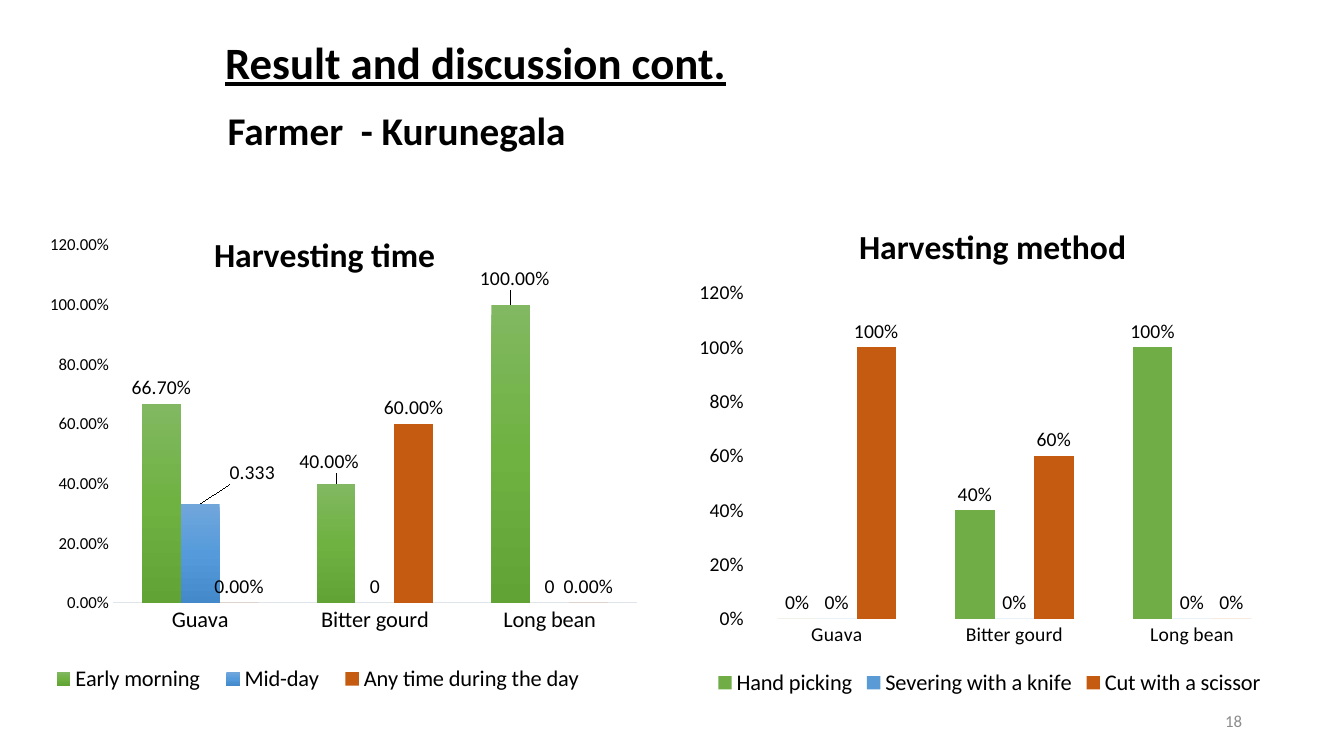
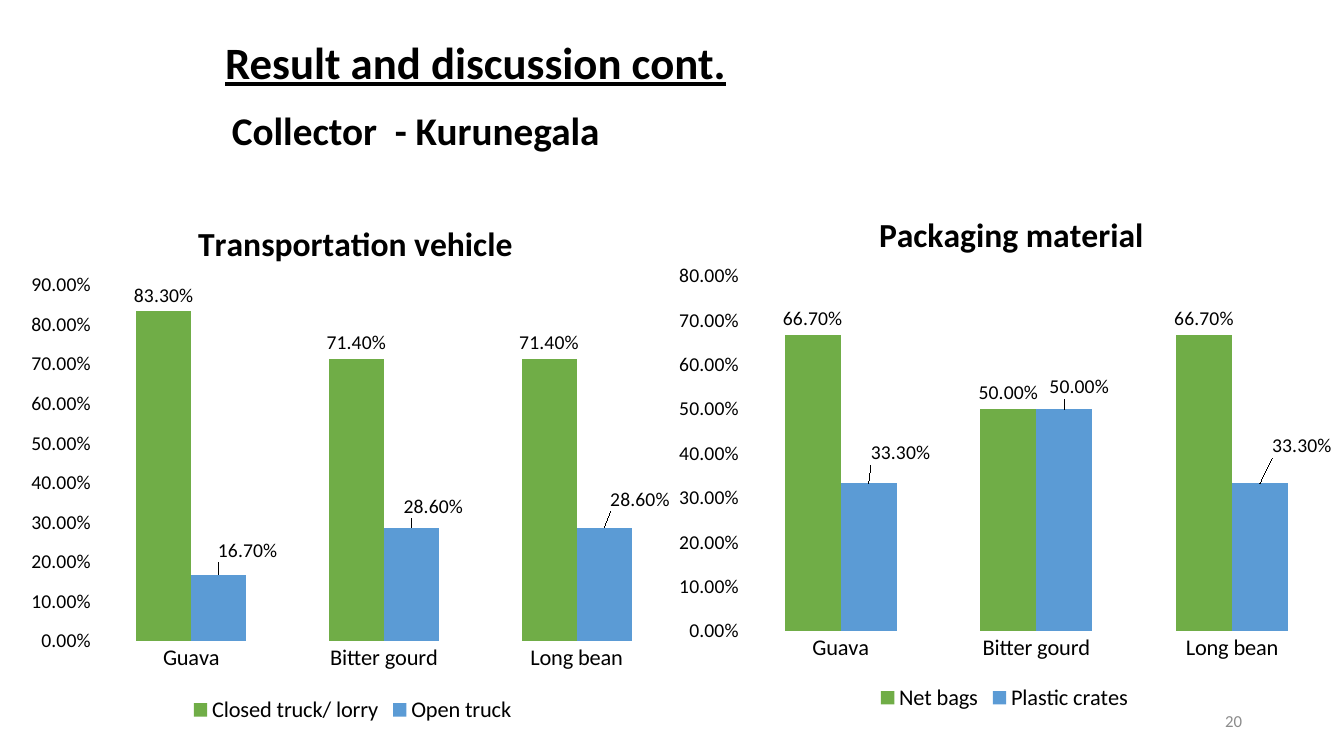
import dataclasses
import typing

import lxml.etree
import pptx
import pptx.chart.chart
import pptx.chart.data
import pptx.chart.series
import pptx.dml.color
import pptx.enum.chart
import pptx.enum.text
import pptx.oxml.ns
import pptx.slide
import pptx.text.text
import pptx.util

SLIDE_WIDTH, SLIDE_HEIGHT = 1344, 756
EMU_PER_PX = 12192000 / SLIDE_WIDTH
FONT = "Calibri"
COLOURS = {
    "text": "000000",
    "page": "8C8C8C",
    "axis": "E0E5EB",
    "green": "70AD47",
    "blue": "5B9BD5",
    "orange": "C55A11",
}
GRADIENTS = {
    "green_gradient": ("81B861", "6FB242", "62A336"),
    "blue_gradient": ("71A6DB", "559BDB", "448ACA"),
}
CROPS = ("Guava", "Bitter gourd", "Long bean")
HEADING = "Result and discussion cont."
FINE_PERCENT, WHOLE_PERCENT = "0.00%", "0%"


class Box(typing.NamedTuple):
    left: int
    top: int
    width: int
    height: int


TITLE_BOX = Box(215, 0, 1023, 130)
PAGE_BOX = Box(950, 701, 302, 40)
SUBTITLE_TOP, SUBTITLE_HEIGHT = 101, 57


@dataclasses.dataclass(frozen=True)
class Series:
    """One set of bars; label_shifts maps a point to its label's move in px."""
    name: str
    values: tuple[float, ...]
    colour: str
    label_format: str = FINE_PERCENT
    label_shifts: dict[int, tuple[int, int]] = dataclasses.field(default_factory=dict)


@dataclasses.dataclass(frozen=True)
class ColumnChart:
    title: str
    title_at: tuple[int, int]
    frame: Box
    plot: Box
    maximum: float
    step: float
    series: tuple[Series, ...]
    axis_format: str = FINE_PERCENT
    category_size: int = 16
    value_size: int = 14
    legend: Box | None = None
    baseline: bool = False


@dataclasses.dataclass(frozen=True)
class ResultSlide:
    subtitle: str
    subtitle_width: int
    page: str
    charts: tuple[ColumnChart, ...]


SLIDES = (
    ResultSlide("Farmer  - Kurunegala ", 372, "18", (
        ColumnChart(
            "Harvesting time", (208, 226), Box(-17, 201, 678, 540),
            Box(113, 245, 524, 358), 1.2, 0.2,
            (
                Series("Early morning", (0.667, 0.4, 1), "green_gradient",
                       label_shifts={1: (-7, -6), 2: (4, -10)}),
                Series("Mid-day", (0.333, 0, 0), "blue_gradient", "General",
                       {0: (52, -15)}),
                Series("Any time during the day", (0, 0.6, 0), "orange"),
            ),
            value_size=12, legend=Box(38, 660, 560, 38), baseline=True,
        ),
        ColumnChart(
            "Harvesting method", (853, 218), Box(652, 194, 675, 507),
            Box(748, 293, 533, 326), 1.2, 0.2,
            (
                Series("Hand picking", (0, 0.4, 1), "green", WHOLE_PERCENT),
                Series("Severing with a knife", (0, 0, 0), "blue", WHOLE_PERCENT),
                Series("Cut with a scissor", (1, 0.6, 0), "orange", WHOLE_PERCENT),
            ),
            axis_format=WHOLE_PERCENT, category_size=14,
        ),
    )),
    ResultSlide("Collector  - Kurunegala ", 410, "20", (
        ColumnChart(
            "Transportation vehicle", (192, 215), Box(18, 196, 669, 532),
            Box(95, 285, 578, 356), 0.9, 0.1,
            (
                Series("Closed truck/ lorry", (0.833, 0.714, 0.714), "green"),
                Series("Open truck", (0.167, 0.286, 0.286), "blue",
                       label_shifts={0: (29, -8), 1: (22, -5), 2: (36, -12)}),
            ),
        ),
        ColumnChart(
            "Packaging material", (873, 206), Box(666, 186, 677, 530),
            Box(743, 276, 587, 355), 0.8, 0.1,
            (
                Series("Net bags", (0.667, 0.5, 0.667), "green"),
                Series("Plastic crates", (0.333, 0.5, 0.333), "blue",
                       label_shifts={0: (32, -14), 1: (15, -6), 2: (42, -21)}),
            ),
        ),
    )),
)


def emu(pixels: int) -> int:
    return round(pixels * EMU_PER_PX)


def emu_box(box: Box) -> tuple[int, ...]:
    return tuple(emu(length) for length in box)


def rgb(name: str) -> pptx.dml.color.RGBColor:
    return pptx.dml.color.RGBColor.from_string(COLOURS[name])


def set_attributes(target: typing.Any, values: dict[str, typing.Any]) -> None:
    for name, value in values.items():
        setattr(target, name, value)


def format_font(font: pptx.text.text.Font, size: int, colour: str = "text",
                **extras: bool) -> None:
    set_attributes(font, {"name": FONT, "size": pptx.util.Pt(size), **extras})
    font.color.rgb = rgb(colour)


def add_element(parent: typing.Any, tag: str, **attributes: str) -> typing.Any:
    return lxml.etree.SubElement(parent, pptx.oxml.ns.qn(tag), attributes)


def set_layout(parent: typing.Any, index: int, values: dict[str, float | str]) -> None:
    """Put a manual layout at the given child index of a chart part."""
    for old in parent.findall(pptx.oxml.ns.qn("c:layout")):
        parent.remove(old)
    layout = add_element(parent, "c:layout")
    manual = add_element(layout, "c:manualLayout")
    for name, value in values.items():
        text = value if isinstance(value, str) else f"{value:.4f}"
        add_element(manual, f"c:{name}", val=text)
    parent.insert(index, layout)


def edge_layout(frame: Box, left: int, top: int) -> dict[str, float | str]:
    return {"xMode": "edge", "yMode": "edge",
            "x": (left - frame.left) / frame.width,
            "y": (top - frame.top) / frame.height}


def box_layout(frame: Box, box: Box) -> dict[str, float | str]:
    return {**edge_layout(frame, box.left, box.top),
            "w": box.width / frame.width, "h": box.height / frame.height}


def fill_series(series: pptx.chart.series.BarSeries, colour: str) -> None:
    fill = series.format.fill
    if colour not in GRADIENTS:
        fill.solid()
        fill.fore_color.rgb = rgb(colour)
        return
    fill.gradient()
    fill.gradient_angle = 270
    stops = series._element.xpath(".//a:gsLst")[0]
    for stop in list(stops):
        stops.remove(stop)
    for position, hex_colour in zip((0, 50000, 100000), GRADIENTS[colour]):
        stop = add_element(stops, "a:gs", pos=str(position))
        add_element(stop, "a:srgbClr", val=hex_colour)


def format_series(series: pptx.chart.series.BarSeries, data: Series, frame: Box) -> None:
    fill_series(series, data.colour)
    series.invert_if_negative = False
    outside = pptx.enum.chart.XL_LABEL_POSITION.OUTSIDE_END
    set_attributes(series.data_labels, {
        "show_value": True,
        "number_format": data.label_format,
        "number_format_is_linked": False,
        "position": outside,
    })
    format_font(series.data_labels.font, 14)
    for index, (right, down) in data.label_shifts.items():
        label = series.points[index].data_label
        label.position = outside
        format_font(label.font, 14)
        element = series._element.xpath(f".//c:dLbl[c:idx/@val='{index}']")[0]
        number_format = add_element(element, "c:numFmt", formatCode=data.label_format,
                                    sourceLinked="0")
        element.insert(1, number_format)
        set_layout(element, 1, {"x": right / frame.width, "y": down / frame.height})


def format_axes(chart: pptx.chart.chart.Chart, data: ColumnChart) -> None:
    no_tick = pptx.enum.chart.XL_TICK_MARK.NONE
    sizes = ((chart.category_axis, data.category_size), (chart.value_axis, data.value_size))
    for axis, size in sizes:
        set_attributes(axis, {"major_tick_mark": no_tick, "minor_tick_mark": no_tick,
                              "has_major_gridlines": False})
        format_font(axis.tick_labels.font, size)
        axis.format.line.fill.background()
    set_attributes(chart.value_axis, {"minimum_scale": 0, "maximum_scale": data.maximum,
                                      "major_unit": data.step})
    set_attributes(chart.value_axis.tick_labels, {
        "number_format": data.axis_format, "number_format_is_linked": False})
    if data.baseline:
        line = chart.category_axis.format.line
        line.color.rgb = rgb("axis")
        line.width = pptx.util.Pt(0.75)


def add_column_chart(slide: pptx.slide.Slide, data: ColumnChart) -> None:
    chart_data = pptx.chart.data.CategoryChartData()
    chart_data.categories = CROPS
    for series in data.series:
        chart_data.add_series(series.name, series.values)
    chart = slide.shapes.add_chart(pptx.enum.chart.XL_CHART_TYPE.COLUMN_CLUSTERED,
                                   *emu_box(data.frame), chart_data).chart
    format_font(chart.font, 14)
    set_attributes(chart, {"has_title": True, "has_legend": True})
    set_attributes(chart.plots[0], {"gap_width": 150, "overlap": 0,
                                    "vary_by_categories": False})

    title = chart.chart_title
    title.text_frame.text = data.title
    format_font(title.text_frame.paragraphs[0].runs[0].font, 24, bold=True)
    set_layout(title._element, 1, edge_layout(data.frame, *data.title_at))

    set_attributes(chart.legend, {
        "position": pptx.enum.chart.XL_LEGEND_POSITION.BOTTOM, "include_in_layout": False})
    format_font(chart.legend.font, 16)
    if data.legend:
        set_layout(chart.legend._element, 1, box_layout(data.frame, data.legend))

    chart_space = chart._chartSpace
    plot_area = chart_space.xpath("c:chart/c:plotArea")[0]
    set_layout(plot_area, 0, {"layoutTarget": "inner", **box_layout(data.frame, data.plot)})
    background = add_element(chart_space, "c:spPr")
    add_element(background, "a:noFill")
    add_element(add_element(background, "a:ln"), "a:noFill")
    chart_space.find(pptx.oxml.ns.qn("c:chart")).addnext(background)

    format_axes(chart, data)
    for series, series_data in zip(chart.plots[0].series, data.series):
        format_series(series, series_data, data.frame)


def add_text(slide: pptx.slide.Slide, box: Box, text: str, size: int,
             alignment: pptx.enum.text.PP_ALIGN, wrap: bool,
             colour: str = "text", **extras: bool) -> None:
    frame = slide.shapes.add_textbox(*emu_box(box)).text_frame
    set_attributes(frame, {"text": text, "word_wrap": wrap,
                           "vertical_anchor": pptx.enum.text.MSO_ANCHOR.MIDDLE})
    paragraph = frame.paragraphs[0]
    paragraph.alignment = alignment
    format_font(paragraph.runs[0].font, size, colour, **extras)


def add_result_slide(presentation: typing.Any, layout: pptx.slide.SlideLayout,
                     data: ResultSlide) -> None:
    slide = presentation.slides.add_slide(layout)
    title = slide.shapes.title.text_frame
    set_attributes(title, {"text": HEADING,
                           "vertical_anchor": pptx.enum.text.MSO_ANCHOR.MIDDLE})
    paragraph = title.paragraphs[0]
    set_attributes(paragraph, {"alignment": pptx.enum.text.PP_ALIGN.LEFT,
                               "line_spacing": 0.9})
    format_font(paragraph.runs[0].font, 32, bold=True, underline=True)
    subtitle_box = Box(TITLE_BOX.left, SUBTITLE_TOP, data.subtitle_width, SUBTITLE_HEIGHT)
    add_text(slide, subtitle_box, data.subtitle, 28,
             pptx.enum.text.PP_ALIGN.CENTER, False, bold=True)
    add_text(slide, PAGE_BOX, data.page, 12, pptx.enum.text.PP_ALIGN.RIGHT, True, "page")
    for chart in data.charts:
        add_column_chart(slide, chart)


def main() -> None:
    presentation = pptx.Presentation()
    set_attributes(presentation, {"slide_width": emu(SLIDE_WIDTH),
                                  "slide_height": emu(SLIDE_HEIGHT)})
    layout = presentation.slide_layouts.get_by_name("Title Only")
    set_attributes(layout.placeholders[0],
                   dict(zip(Box._fields, emu_box(TITLE_BOX))))
    for data in SLIDES:
        add_result_slide(presentation, layout, data)
    presentation.save("out.pptx")


if __name__ == "__main__":
    main()
